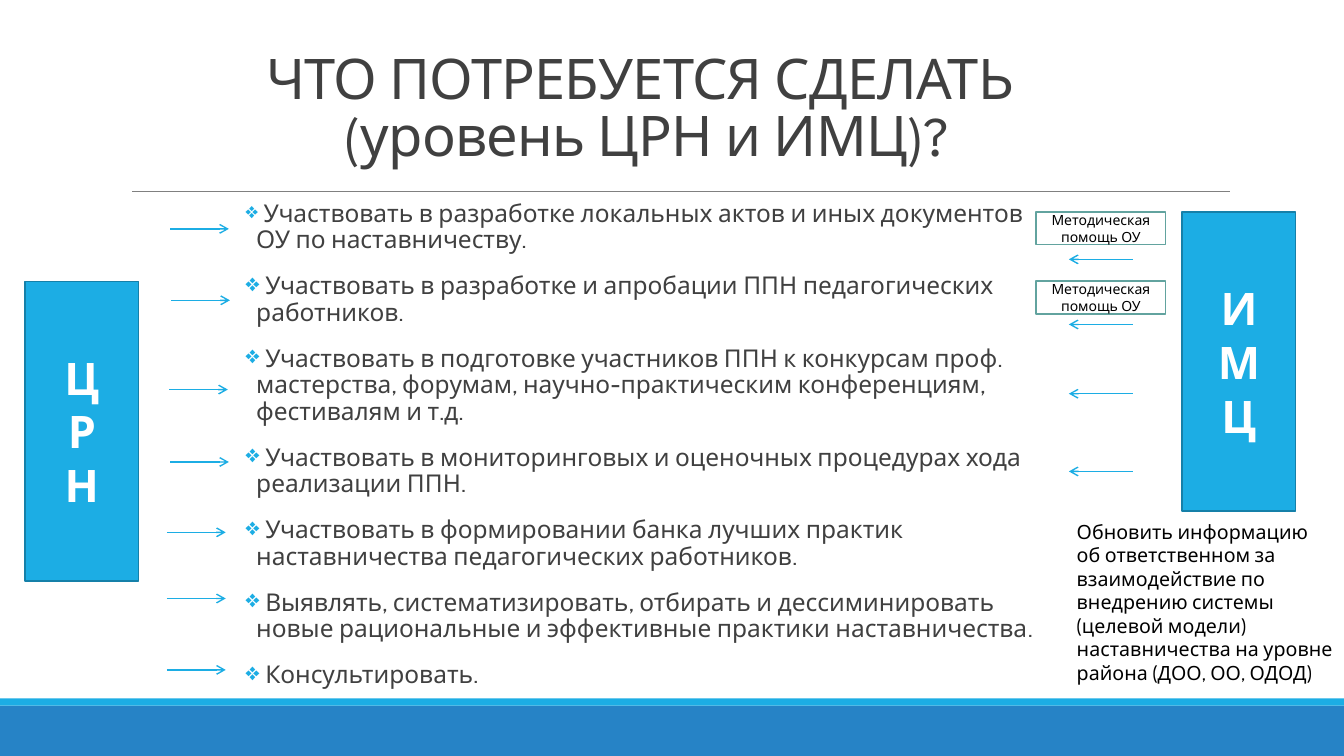
from lxml.etree import SubElement
from pptx import Presentation
from pptx.dml.color import RGBColor
from pptx.enum.shapes import MSO_CONNECTOR as CONN, MSO_SHAPE as SHAPE
from pptx.enum.text import MSO_ANCHOR as ANCHOR, PP_ALIGN as ALIGN
from pptx.oxml.ns import qn
from pptx.util import Pt

PX = 9525  # EMU in one px, 96 px to the inch

SKY = RGBColor(0x1C, 0xAD, 0xE4)
BLUE = RGBColor(0x26, 0x83, 0xC6)
EDGE = RGBColor(0x15, 0x80, 0xA9)
TEAL = RGBColor(0x62, 0xA3, 0x9F)
GRAY = RGBColor(0x80, 0x80, 0x80)
DARK = RGBColor(0x40, 0x40, 0x40)
BLACK = RGBColor(0x00, 0x00, 0x00)
WHITE = RGBColor(0xFF, 0xFF, 0xFF)

HEAD_FONT = "League Spartan"
BODY_FONT = "Cabin"

TITLE = "ЧТО ПОТРЕБУЕТСЯ СДЕЛАТЬ \v(уровень ЦРН и ИМЦ)?"
TASKS = [
    "Участвовать в разработке локальных актов и иных документов ОУ по наставничеству.",
    "Участвовать в разработке и апробации ППН педагогических работников.",
    "Участвовать в подготовке участников ППН к конкурсам проф. мастерства, форумам, "
    "научно-практическим конференциям, фестивалям и т.д.",
    "Участвовать в мониторинговых и оценочных процедурах хода реализации ППН.",
    "Участвовать в формировании банка лучших практик наставничества педагогических "
    "работников.",
    "Выявлять, систематизировать, отбирать и дессиминировать новые рациональные и "
    "эффективные практики наставничества.",
    "Консультировать.",
]
HELP = "Методическая помощь ОУ"
UPDATE = ("Обновить информацию об ответственном за взаимодействие по внедрению системы "
          "(целевой модели) наставничества на уровне района (ДОО, ОО, ОДОД)")

TASK_ARROWS = [(162, 218), (163, 286), (161, 371), (162, 440),
               (159, 507), (159, 570), (159, 638)]
HELP_ARROWS_Y = [247, 309, 375, 449]


def put_text(tf, lines, size, font=HEAD_FONT, color=BLACK, bold=False, align=ALIGN.LEFT,
             anchor=ANCHOR.TOP, leading=None, before=None, after=None, spacing=None):
    """Fill a text frame with one paragraph per line."""
    tf.word_wrap = True
    tf.vertical_anchor = anchor
    for i, line in enumerate(lines):
        p = tf.add_paragraph() if i else tf.paragraphs[0]
        p.text = line
        p.alignment = align
        p.line_spacing = leading
        p.space_before = before
        p.space_after = after
        for r in p.runs:
            r.font.size = Pt(size)
            r.font.name = font
            r.font.bold = bold
            r.font.color.rgb = color
            if spacing is not None:
                r.font._element.set("spc", str(round(spacing * 100)))


def add_bullet(p, char, color, indent, percent=100):
    pPr = p._p.get_or_add_pPr()
    pPr.set("marL", str(indent * PX))
    pPr.set("indent", str(-indent * PX))
    clr = SubElement(pPr, qn("a:buClr"))
    SubElement(clr, qn("a:srgbClr"), val=str(color))
    SubElement(pPr, qn("a:buSzPct"), val=str(percent * 1000))
    SubElement(pPr, qn("a:buChar"), char=char)


class SlideBuilder:
    def __init__(self, prs):
        self.slide = prs.slides.add_slide(prs.slide_layouts[6])
        self.shapes = self.slide.shapes

    def rect(self, x, y, w, h, fill, edge=None):
        sp = self.shapes.add_shape(SHAPE.RECTANGLE, x * PX, y * PX, w * PX, h * PX)
        sp.shadow.inherit = False
        sp.fill.solid()
        sp.fill.fore_color.rgb = fill
        if edge is None:
            sp.line.fill.background()
        else:
            sp.line.color.rgb = edge
            sp.line.width = Pt(1.25)
        return sp

    def label(self, box, fill, edge, lines, **fmt):
        sp = self.rect(*box, fill, edge)
        put_text(sp.text_frame, lines, align=ALIGN.CENTER, anchor=ANCHOR.MIDDLE, **fmt)

    def text(self, x, y, w, h, lines, **fmt):
        tb = self.shapes.add_textbox(x * PX, y * PX, w * PX, h * PX)
        put_text(tb.text_frame, lines, **fmt)
        return tb.text_frame

    def hline(self, x1, x2, y, color=SKY, width=1, arrow=True):
        ln = self.shapes.add_connector(CONN.STRAIGHT, x1 * PX, y * PX, x2 * PX, y * PX)
        ln.line.color.rgb = color
        ln.line.width = Pt(width)
        if arrow:
            SubElement(ln.line._get_or_add_ln(), qn("a:tailEnd"), type="arrow")
        SubElement(ln._element.spPr, qn("a:effectLst"))


def main():
    prs = Presentation()
    prs.slide_width = 1280 * PX
    prs.slide_height = 720 * PX
    s = SlideBuilder(prs)

    s.rect(0, 672, 1280, 48, BLUE)
    s.rect(0, 665, 1280, 7, SKY)
    s.hline(126, 1171, 182, GRAY, 0.5, arrow=False)
    s.text(52, 10, 1128, 155, [TITLE], size=40, color=DARK, align=ALIGN.CENTER,
           anchor=ANCHOR.BOTTOM, leading=0.85, spacing=-0.5)

    tasks = s.text(234, 187, 753, 479, [f" {task}" for task in TASKS], size=17.5,
                   font=BODY_FONT, color=DARK, leading=0.9, before=Pt(12), after=Pt(2))
    tasks.margin_left = tasks.margin_right = 0
    for i, p in enumerate(tasks.paragraphs):
        add_bullet(p, "❖", SKY, 10, 100 if i else 89)

    for x, y in TASK_ARROWS:
        s.hline(x, x + 56, y)
    for y in HELP_ARROWS_Y:
        s.hline(1079, 1018, y)

    for name, x, y in (("ЦРН", 24, 268), ("ИМЦ", 1126, 202)):
        s.label((x, y, 108, 285), SKY, EDGE, name, size=32, color=WHITE, bold=True)
    for y in (202, 268):
        s.label((987, y, 123, 31), WHITE, TEAL, [HELP], size=10)
    s.text(1016, 490, 264, 168, [UPDATE], size=14, font=BODY_FONT)

    prs.save("out.pptx")


if __name__ == "__main__":
    main()
